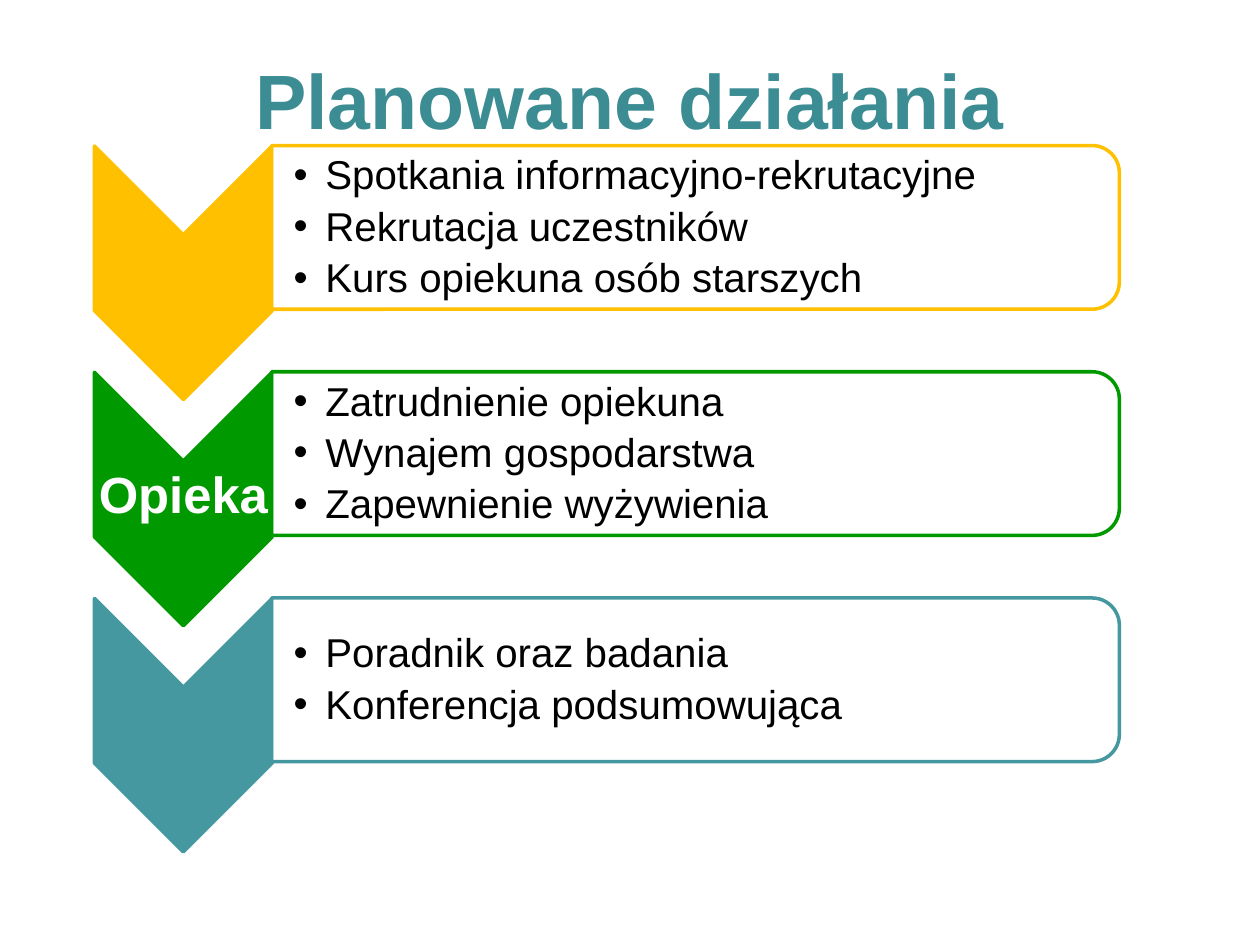
from dataclasses import dataclass

from lxml.etree import SubElement
from pptx import Presentation
from pptx.dml.color import RGBColor
from pptx.enum.shapes import MSO_SHAPE
from pptx.enum.text import MSO_ANCHOR, PP_ALIGN
from pptx.oxml.ns import qn
from pptx.shapes.autoshape import Shape
from pptx.shapes.shapetree import GroupShapes
from pptx.slide import Slide
from pptx.util import Cm, Pt


@dataclass(frozen=True)
class Theme:
    font: str = "Arial"
    title: str = "3C8C93"
    ink: str = "000000"
    paper: str = "FFFFFF"
    yellow: str = "FFC000"
    green: str = "009900"
    teal: str = "4597A0"
    title_size: int = 44
    label_size: int = 29
    list_size: int = 23
    outline: int = 2
    panel_opacity: int = 90


@dataclass(frozen=True)
class Box:
    left: float
    top: float
    width: float
    height: float

    def lowered(self, distance: float) -> "Box":
        return Box(self.left, self.top + distance, self.width, self.height)

    def lengths(self) -> tuple[Cm, Cm, Cm, Cm]:
        return Cm(self.left), Cm(self.top), Cm(self.width), Cm(self.height)


@dataclass(frozen=True)
class Stage:
    color: str
    items: tuple[str, ...]
    label: str = ""


THEME = Theme()
TITLE_BOX = Box(1.27, 0.76, 22.86, 3.18)
CHEVRON_BOX = Box(1.14, 3.71, 5.11, 3.58)
LABEL_BOX = Box(1.91, 4.71, 3.58, 1.52)
PANEL_BOX = Box(12.37, -3.96, 3.3, 17.09)
LIST_BOX = Box(5.46, 3.1, 16.94, 3)
STAGE_PITCH = 4.56
INDENT = Cm(0.64)
INSET = 0.05
STAGES = (
    Stage(THEME.yellow, (
        "Spotkania informacyjno-rekrutacyjne",
        "Rekrutacja uczestników",
        "Kurs opiekuna osób starszych",
    )),
    Stage(THEME.green, (
        "Zatrudnienie opiekuna",
        "Wynajem gospodarstwa",
        "Zapewnienie wyżywienia",
    ), "Opieka"),
    Stage(THEME.teal, (
        "Poradnik oraz badania",
        "Konferencja podsumowująca",
    )),
)


def add_span(para, text: str, size: int, color: str, bold: bool = False) -> None:
    span = para.add_run()
    span.text = text
    span.font.name = THEME.font
    span.font.size = Pt(size)
    span.font.bold = bold
    span.font.color.rgb = RGBColor.from_string(color)


def add_title(page: Slide, text: str) -> None:
    title = page.shapes.title
    title.left, title.top, title.width, title.height = TITLE_BOX.lengths()
    frame = title.text_frame
    frame.vertical_anchor = MSO_ANCHOR.TOP
    frame.margin_top = Cm(0.29)
    para = frame.paragraphs[0]
    para.alignment = PP_ALIGN.CENTER
    add_span(para, text, THEME.title_size, THEME.title, bold=True)


def add_turned_shape(shapes: GroupShapes, kind: MSO_SHAPE, box: Box,
                     fill: str, line: str) -> Shape:
    shape = shapes.add_shape(kind, *box.lengths())
    shape.rotation = 90
    shape.shadow.inherit = False
    shape.fill.solid()
    shape.fill.fore_color.rgb = RGBColor.from_string(fill)
    shape.line.color.rgb = RGBColor.from_string(line)
    shape.line.width = Pt(THEME.outline)
    return shape


def set_opacity(shape: Shape, percent: int) -> None:
    color = shape.fill._xPr.find(qn("a:solidFill"))[0]
    SubElement(color, qn("a:alpha")).set("val", str(percent * 1000))


def add_text_frame(shapes: GroupShapes, box: Box, left_inset: float = INSET):
    frame = shapes.add_textbox(*box.lengths()).text_frame
    frame.word_wrap = True
    frame.vertical_anchor = MSO_ANCHOR.MIDDLE
    frame.margin_left = Cm(left_inset)
    frame.margin_right = frame.margin_top = frame.margin_bottom = Cm(INSET)
    return frame


def add_label(shapes: GroupShapes, box: Box, text: str) -> None:
    para = add_text_frame(shapes, box).paragraphs[0]
    para.alignment = PP_ALIGN.CENTER
    para.line_spacing = 0.9
    add_span(para, text, THEME.label_size, THEME.paper, bold=True)


def add_list(shapes: GroupShapes, box: Box, items: tuple[str, ...]) -> None:
    frame = add_text_frame(shapes, box, left_inset=0.46)
    for index, item in enumerate(items):
        para = frame.add_paragraph() if index else frame.paragraphs[0]
        para.level = 1
        para.line_spacing = 0.9
        para.space_after = Pt(4.5)
        properties = para._p.get_or_add_pPr()
        properties.set("marL", str(INDENT))
        properties.set("indent", str(-INDENT))
        SubElement(properties, qn("a:buFont")).set("typeface", THEME.font)
        SubElement(properties, qn("a:buChar")).set("char", "•")
        add_span(para, item, THEME.list_size, THEME.ink)


def add_stage(shapes: GroupShapes, stage: Stage, offset: float) -> None:
    add_turned_shape(shapes, MSO_SHAPE.CHEVRON, CHEVRON_BOX.lowered(offset),
                     stage.color, stage.color)
    if stage.label:
        add_label(shapes, LABEL_BOX.lowered(offset), stage.label)
    panel = add_turned_shape(shapes, MSO_SHAPE.ROUND_2_SAME_RECTANGLE,
                             PANEL_BOX.lowered(offset), THEME.paper, stage.color)
    set_opacity(panel, THEME.panel_opacity)
    add_list(shapes, LIST_BOX.lowered(offset), stage.items)


def main() -> None:
    deck = Presentation()
    deck.slide_width, deck.slide_height = Cm(25.4), Cm(19.05)
    page = deck.slides.add_slide(deck.slide_layouts.get_by_name("Title Only"))
    add_title(page, "Planowane działania")
    diagram = page.shapes.add_group_shape()
    for index, stage in enumerate(STAGES):
        add_stage(diagram.shapes, stage, index * STAGE_PITCH)
    deck.save("out.pptx")


if __name__ == "__main__":
    main()
